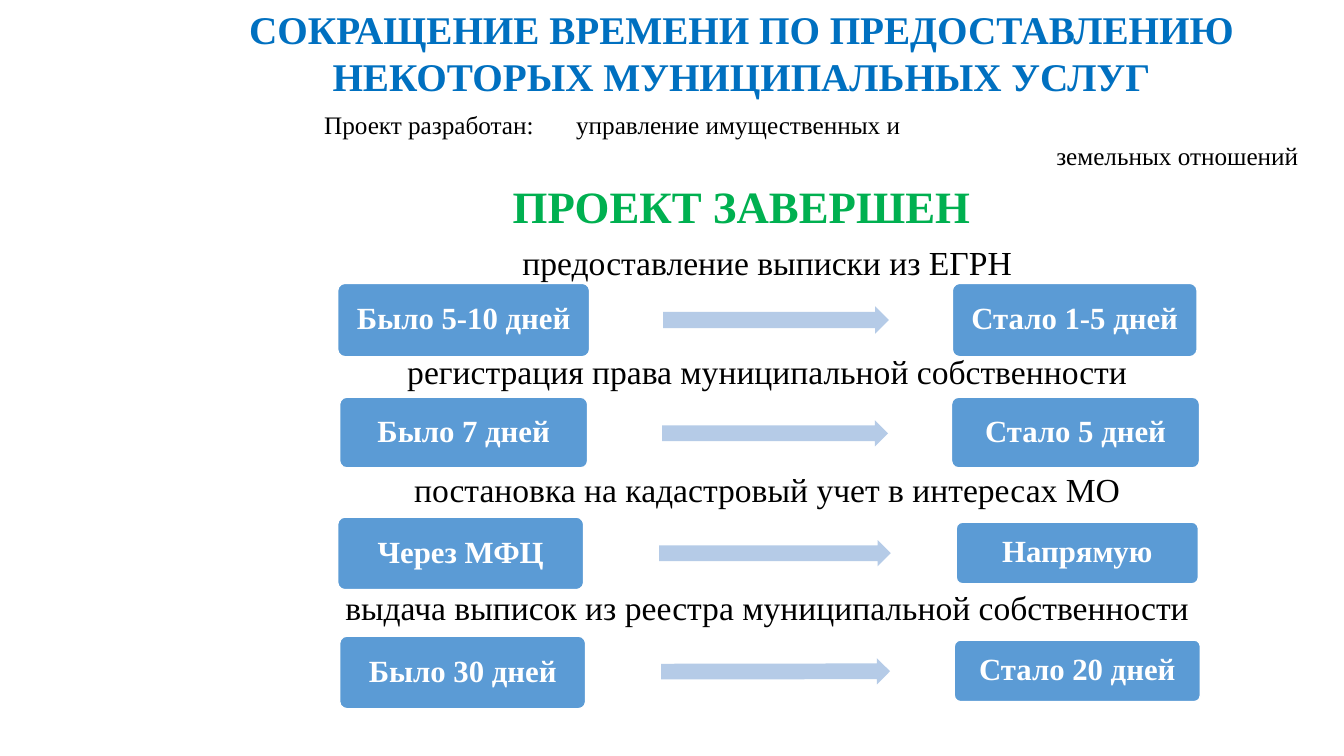
from pptx import Presentation
from pptx.dml.color import RGBColor
from pptx.enum.shapes import MSO_SHAPE as Shape
from pptx.enum.text import MSO_ANCHOR as Anchor, PP_ALIGN as Align
from pptx.oxml import parse_xml
from pptx.oxml.ns import nsdecls
from pptx.util import Cm, Pt

WHITE = RGBColor(0xFF, 0xFF, 0xFF)
BLACK = RGBColor(0x00, 0x00, 0x00)
TITLE = RGBColor(0x00, 0x70, 0xC0)
GREEN = RGBColor(0x00, 0xB0, 0x50)
BLUE = RGBColor(0x5B, 0x9B, 0xD5)
PALE = RGBColor(0xB5, 0xCB, 0xE7)

# Caption and the space before it, in points
TOPICS = [
    ("предоставление выписки из ЕГРН", 0),
    ("регистрация права муниципальной собственности", 49.4),
    ("постановка на кадастровый учет в интересах МО", 55.2),
    ("выдача выписок из реестра муниципальной собственности", 55.2),
]

# Old state, its box, arrow box, arrow turn, new state, its box (cm)
ROWS = [
    ("Было 5-10 дней", (8.51, 7.14, 6.35, 1.85), (16.71, 7.72, 5.69, 0.69), 0,
     "Стало 1-5 дней", (24, 7.14, 6.17, 1.85)),
    ("Было 7 дней", (8.56, 10.01, 6.25, 1.78), (16.69, 10.59, 5.69, 0.66), 0,
     "Стало 5 дней", (23.98, 10.01, 6.25, 1.78)),
    ("Через МФЦ", (8.51, 13.03, 6.2, 1.83), (16.61, 13.61, 5.84, 0.66), 0,
     "Напрямую", (24.1, 13.16, 6.1, 1.55)),
    ("Было 30 дней", (8.56, 16.03, 6.2, 1.83), (16.66, 16.59, 5.77, 0.66), -0.1,
     "Стало 20 дней", (24.05, 16.13, 6.2, 1.55)),
]


class Deck:
    face = "Times New Roman"

    def __init__(self, slide):
        self.slide = slide

    def put(self, para, text, size, color, bold=False, align=Align.CENTER):
        """Fill and style one paragraph."""
        para.text = text
        para.alignment = align
        para.font.color.rgb = color
        style = {"name": self.face, "size": Pt(size), "bold": bold}
        for key, value in style.items():
            setattr(para.font, key, value)

    def frame(self, box, wrap=True):
        frame = self.slide.shapes.add_textbox(*map(Cm, box)).text_frame
        frame.word_wrap = wrap
        return frame

    def label(self, box, text, size, color, wrap=True):
        para = self.frame(box, wrap).paragraphs[0]
        self.put(para, text, size, color, bold=True)

    def topics(self, box, items):
        frame = self.frame(box)
        for i, (text, gap) in enumerate(items):
            para = frame.add_paragraph() if i else frame.paragraphs[0]
            if i:
                para.space_before = Pt(gap)
            self.put(para, text, 24, BLACK)

    def credit(self, box, role, names, left, right):
        """Role at the left, first name line at a right tab, the rest below."""
        frame = self.frame(box)
        first = frame.paragraphs[0]
        props = first._p.get_or_add_pPr()
        props.set("marL", str(Cm(left)))
        props.set("indent", "0")
        props.append(parse_xml(
            f'<a:tabLst {nsdecls("a")}><a:tab pos="{Cm(right)}" algn="r"/></a:tabLst>'))
        self.put(first, f"{role}\t{names[0]}", 18, BLACK, align=Align.LEFT)
        for name in names[1:]:
            self.put(frame.add_paragraph(), name, 18, BLACK, align=Align.RIGHT)

    def shape(self, kind, box, fill, *adjust):
        shape = self.slide.shapes.add_shape(kind, *map(Cm, box))
        shape.shadow.inherit = False
        shape.fill.solid()
        shape.fill.fore_color.rgb = fill
        shape.line.fill.background()
        for i, value in enumerate(adjust):
            shape.adjustments[i] = value
        return shape

    def card(self, box, text):
        card = self.shape(Shape.ROUNDED_RECTANGLE, box, BLUE, 0.1)
        card.line.color.rgb = WHITE
        card.line.width = Pt(1)
        frame = card.text_frame
        style = {"word_wrap": True, "vertical_anchor": Anchor.MIDDLE}
        for side in ("left", "right", "top", "bottom"):
            style[f"margin_{side}"] = Cm(0.23)
        for key, value in style.items():
            setattr(frame, key, value)
        para = frame.paragraphs[0]
        para.line_spacing = 0.9
        self.put(para, text, 22, WHITE, bold=True)

    def arrow(self, box, turn):
        arrow = self.shape(Shape.RIGHT_ARROW, box, PALE, 0.6, 0.5)
        arrow.rotation = turn


def main():
    show = Presentation()
    show.slide_width, show.slide_height = Cm(33.87), Cm(19.05)
    deck = Deck(show.slides.add_slide(show.slide_layouts[6]))
    deck.label((3.23, 0, 30.91, 2.64),
               "СОКРАЩЕНИЕ ВРЕМЕНИ ПО ПРЕДОСТАВЛЕНИЮ НЕКОТОРЫХ МУНИЦИПАЛЬНЫХ УСЛУГ",
               28, TITLE)
    deck.topics((5.72, 5.97, 27.23, 10.6), TOPICS)
    for old, start, way, turn, new, end in ROWS:
        deck.card(start, old)
        deck.arrow(way, turn)
        deck.card(end, new)
    deck.label((12.62, 4.39, 12.14, 1.63), "ПРОЕКТ ЗАВЕРШЕН", 32, GREEN, wrap=False)
    deck.credit((4.42, 2.64, 28.55, 1.8), "Проект разработан:",
                ["управление имущественных и", "земельных отношений"], 3.5, 27.84)
    show.save("out.pptx")


if __name__ == "__main__":
    main()
